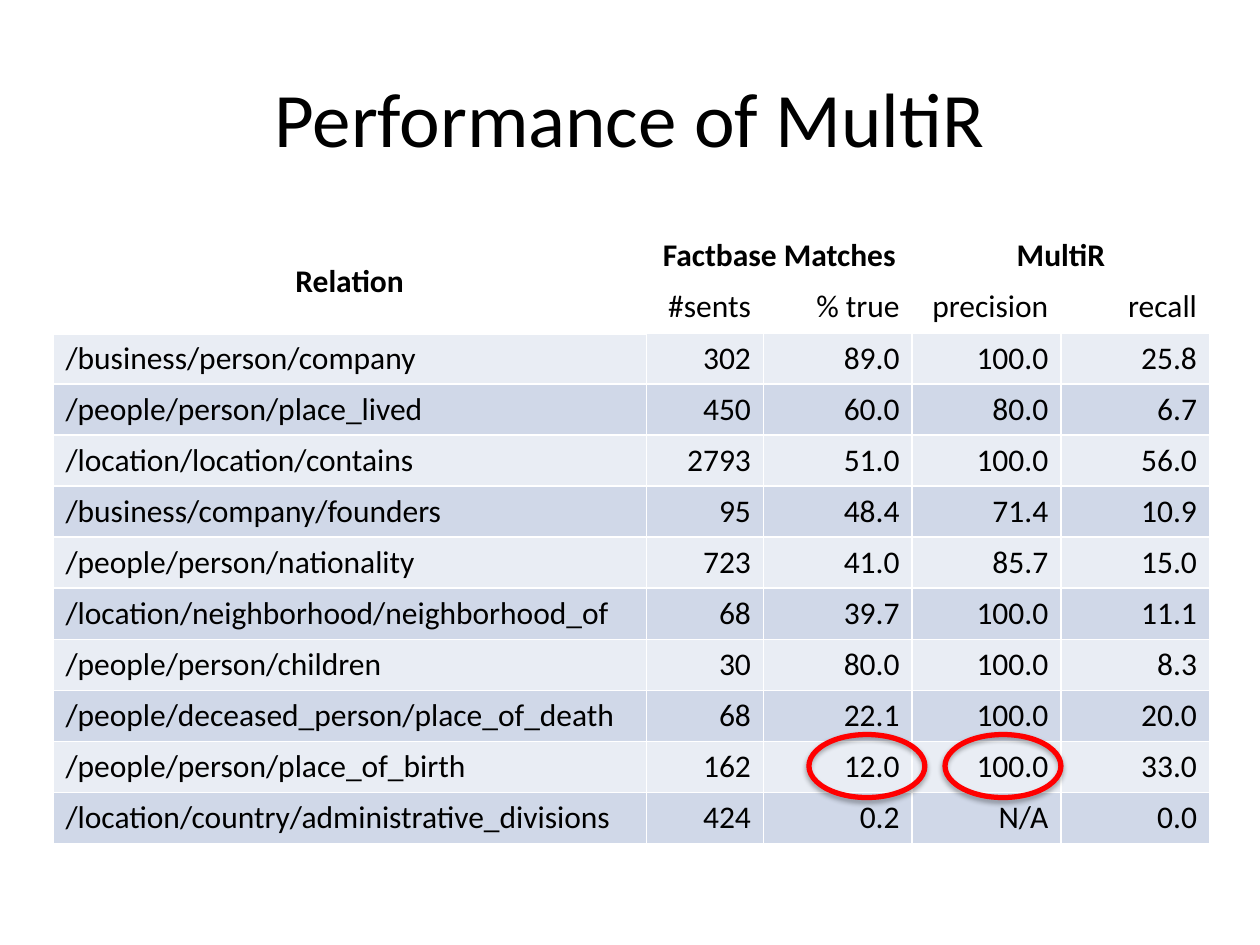
"""Build a slide with a table of MultiR performance per relation."""
from lxml.etree import SubElement
from pptx import Presentation
from pptx.dml.color import RGBColor
from pptx.enum.shapes import MSO_SHAPE
from pptx.enum.text import MSO_ANCHOR, PP_ALIGN
from pptx.oxml import parse_xml
from pptx.oxml.ns import nsdecls, qn
from pptx.util import Inches, Pt


def color(value):
    return RGBColor.from_string(value)


def style_paragraph(para, size, align, bold=False):
    para.alignment = align
    para.font.name = "Calibri"
    para.font.size = Pt(size)
    para.font.bold = bold
    para.font.color.rgb = color("000000")


deck = Presentation()
deck.slide_width, deck.slide_height = Inches(10), Inches(7.5)
page = deck.slides.add_slide(deck.slide_layouts[6])

title = page.shapes.add_textbox(Inches(0.5), Inches(0.3), Inches(9), Inches(1.25))
title.text_frame.word_wrap = True
title.text_frame.vertical_anchor = MSO_ANCHOR.MIDDLE
title.text_frame.text = "Performance of MultiR"
style_paragraph(title.text_frame.paragraphs[0], 44, PP_ALIGN.CENTER)

rows = [
    ("Relation", "Factbase Matches", "", "MultiR", ""),
    ("", "#sents", "% true", "precision", "recall"),
    ("/business/person/company", "302", "89.0", "100.0", "25.8"),
    ("/people/person/place_lived", "450", "60.0", "80.0", "6.7"),
    ("/location/location/contains", "2793", "51.0", "100.0", "56.0"),
    ("/business/company/founders", "95", "48.4", "71.4", "10.9"),
    ("/people/person/nationality", "723", "41.0", "85.7", "15.0"),
    ("/location/neighborhood/neighborhood_of", "68", "39.7", "100.0", "11.1"),
    ("/people/person/children", "30", "80.0", "100.0", "8.3"),
    ("/people/deceased_person/place_of_death", "68", "22.1", "100.0", "20.0"),
    ("/people/person/place_of_birth", "162", "12.0", "100.0", "33.0"),
    ("/location/country/administrative_divisions", "424", "0.2", "N/A", "0.0"),
]
widths = [4.71, 0.93, 1.18, 1.18, 1.18]
table = page.shapes.add_table(
    len(rows), len(widths), Inches(0.42), Inches(1.83), Inches(9.17), Inches(4.87)
).table
table.first_row = table.horz_banding = False
for column, width in zip(table.columns, widths):
    column.width = Inches(width)

for row_index, row in enumerate(rows):
    for column_index, text in enumerate(row):
        cell = table.cell(row_index, column_index)
        heading = row_index == 0
        if heading:
            align = PP_ALIGN.CENTER
        else:
            align = PP_ALIGN.RIGHT if column_index else PP_ALIGN.LEFT
        if text:
            cell.text = text
        style_paragraph(cell.text_frame.paragraphs[0], 18, align, heading)
        properties = cell._tc.get_or_add_tcPr()
        for side in ("L", "R", "T", "B"):
            weight = 3 if heading and side == "B" else 1
            line = SubElement(properties, qn(f"a:ln{side}"), w=str(Pt(weight)))
            fill = SubElement(line, qn("a:solidFill"))
            SubElement(fill, qn("a:srgbClr"), val="FFFFFF")
        cell.fill.solid()
        band = ("E9EDF4", "D0D8E8")[row_index % 2]
        cell.fill.fore_color.rgb = color("FFFFFF" if row_index < 2 else band)

table.cell(0, 0).merge(table.cell(1, 0))
table.cell(0, 1).merge(table.cell(0, 2))
table.cell(0, 3).merge(table.cell(0, 4))
table.cell(0, 0).vertical_anchor = MSO_ANCHOR.MIDDLE
table.cell(0, 3).vertical_anchor = MSO_ANCHOR.BOTTOM

for left in (6.42, 7.5):
    ring = page.shapes.add_shape(
        MSO_SHAPE.OVAL, Inches(left), Inches(5.83), Inches(0.92), Inches(0.5)
    )
    ring.fill.background()
    ring.line.color.rgb = color("FF0000")
    ring.line.width = Pt(3)
    ring._element.spPr.append(parse_xml(
        f'<a:effectLst {nsdecls("a")}>'
        f'<a:outerShdw blurRad="{Pt(3.1)}" dist="{Pt(1.8)}" dir="5400000" rotWithShape="0">'
        '<a:srgbClr val="000000"><a:alpha val="35000"/></a:srgbClr>'
        '</a:outerShdw></a:effectLst>'
    ))

deck.save("out.pptx")
